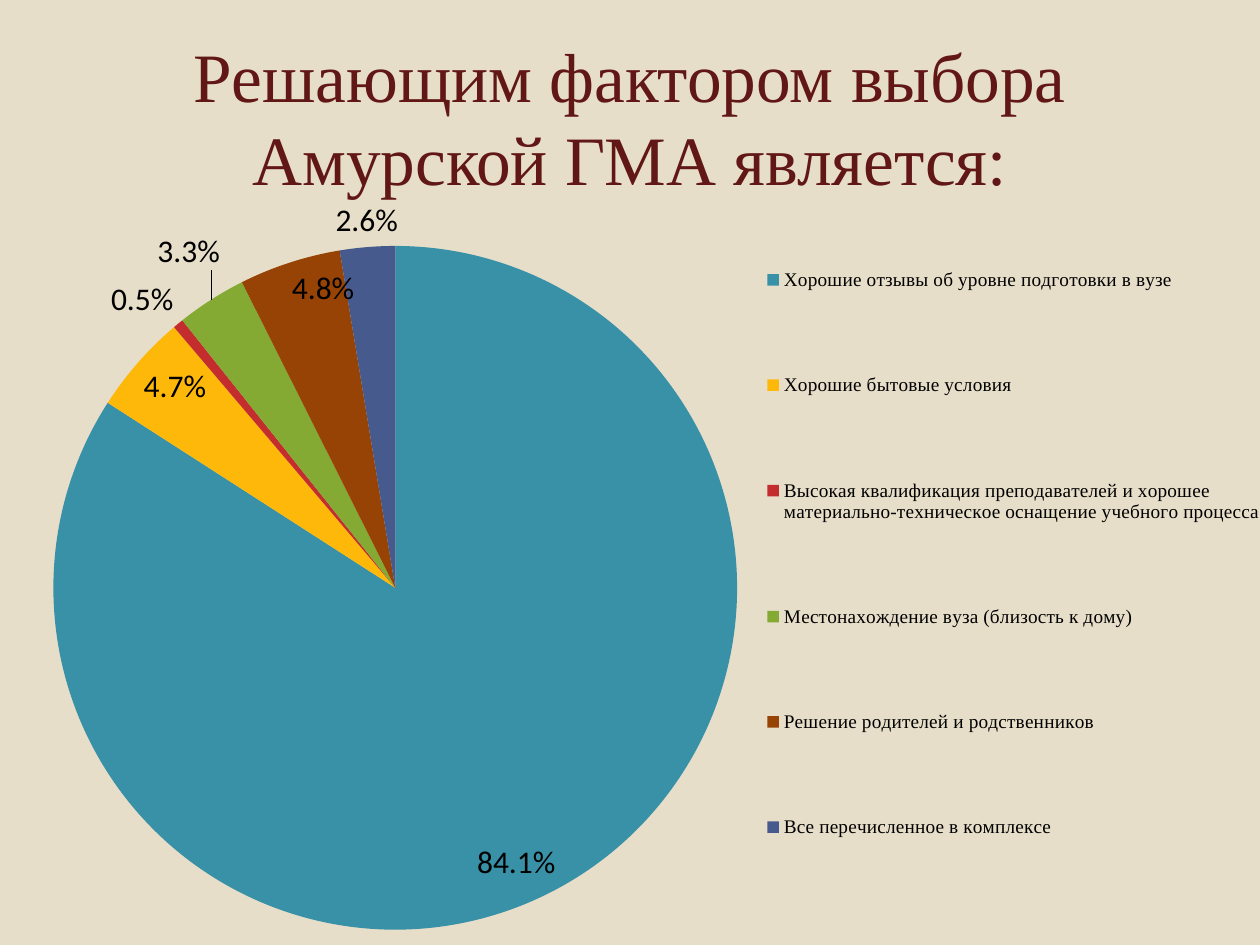
"""Build a slide with a pie chart of the reasons for choosing the academy."""
from lxml.etree import SubElement as Sub
from pptx import Presentation
from pptx.chart.data import CategoryChartData as Data
from pptx.dml.color import RGBColor as RGB
from pptx.enum.chart import XL_CHART_TYPE as Kind, XL_LEGEND_POSITION as Side
from pptx.enum.chart import XL_LABEL_POSITION as Spot
from pptx.enum.text import MSO_ANCHOR as Anchor, PP_ALIGN as Align
from pptx.oxml import parse_xml
from pptx.oxml.ns import nsdecls, qn
from pptx.util import Inches, Pt


def style(font, name, size, color):
    font.name, font.size = name, Pt(size)
    font.color.rgb = RGB.from_string(color)


def layout(tags):
    body = "".join(f'<c:{tag} val="{val}"/>' for tag, val in tags)
    return parse_xml(f'<c:layout {nsdecls("c")}><c:manualLayout>{body}</c:manualLayout></c:layout>')


rows = [
    ("Хорошие отзывы об уровне подготовки в вузе", 84.1, "3891A7", Spot.INSIDE_END),
    ("Хорошие бытовые условия", 4.7, "FEB80A", Spot.INSIDE_END),
    ("Высокая квалификация преподавателей и хорошее материально-техническое "
     "оснащение учебного процесса", 0.5, "C32D2E", Spot.OUTSIDE_END),
    ("Местонахождение вуза (близость к дому)", 3.3, "84AA33", Spot.OUTSIDE_END),
    ("Решение родителей и родственников", 4.8, "964305", Spot.INSIDE_END),
    ("Все перечисленное в комплексе", 2.6, "475A8D", Spot.OUTSIDE_END),
]

deck = Presentation()
deck.slide_width, deck.slide_height = Inches(10), Inches(7.5)
wide, high = deck.slide_width, deck.slide_height
slide = deck.slides.add_slide(deck.slide_layouts[6])
slide.background.fill.solid()
slide.background.fill.fore_color.rgb = RGB.from_string("E7DEC9")

title = slide.shapes.add_textbox(int(wide * 0.05), int(high * 0.04), int(wide * 0.9), Inches(1.25))
frame = title.text_frame
frame.word_wrap, frame.vertical_anchor = True, Anchor.MIDDLE
frame.text = "Решающим фактором выбора Амурской ГМА является:"
head = frame.paragraphs[0]
head.alignment = Align.CENTER
style(head.runs[0].font, "Times New Roman", 39.6, "621717")

data = Data(number_format="0.0")
data.categories = [row[0] for row in rows]
data.add_series("Series 1", [row[1] for row in rows])
top = Inches(1.47)
chart = slide.shapes.add_chart(Kind.PIE, 0, top, Inches(10.12), high - top, data).chart
chart.has_title = False
style(chart.font, "Calibri", 18, "000000")

chart.has_legend = True
legend = chart.legend
legend.position, legend.include_in_layout = Side.RIGHT, False
style(legend.font, "Times New Roman", 11, "000000")
place = [("xMode", "edge"), ("yMode", "edge")]
key = layout(place + [("x", 0.59), ("y", 0), ("w", 0.41), ("h", 0.97)])
legend._element.find(qn("c:legendPos")).addnext(key)

plot = chart.plots[0]
plot.vary_by_categories = True
area = plot._element.getparent()
for old in area.findall(qn("c:layout")):
    area.remove(old)
area.insert(0, layout([("layoutTarget", "inner")] + place
                      + [("x", 0.04), ("y", 0.08), ("w", 0.54), ("h", 0.9)]))

pie = plot.series[0]
labels = pie.data_labels
labels.show_percentage, labels.show_value = True, False
labels.number_format, labels.number_format_is_linked = "0.0%", False
for spot, (name, value, color, side) in enumerate(rows):
    point = pie.points[spot]
    point.format.fill.solid()
    point.format.fill.fore_color.rgb = RGB.from_string(color)
    label = point.data_label
    style(label.font, "Calibri", 18, "000000")
    label.position = side
    node = label._dLbl
    node.find(qn("c:showVal")).set("val", "0")
    node.find(qn("c:showPercent")).set("val", "1")
    form = parse_xml(f'<c:numFmt {nsdecls("c")} formatCode="0.0%" sourceLinked="0"/>')
    node.find(qn("c:idx")).addnext(form)
    if value == 3.3:
        form.addprevious(layout([("x", 0.01), ("y", -0.03)]))

lead = labels._element.find(qn("c:showLeaderLines"))
if lead is None:
    lead = Sub(labels._element, qn("c:showLeaderLines"))
lead.set("val", "1")

deck.save("out.pptx")
